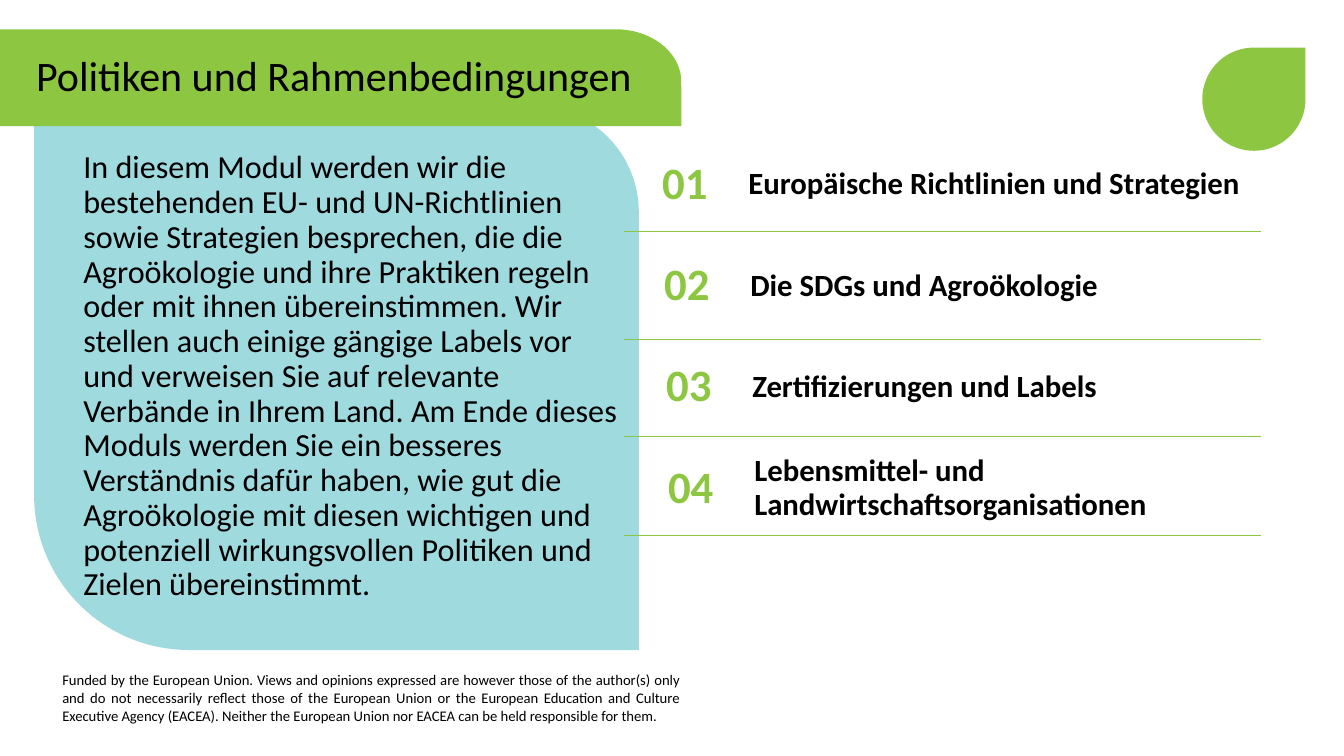
import math

import pptx
import pptx.dml.color
import pptx.enum.shapes
import pptx.enum.text
import pptx.util
from lxml import etree

Cm = pptx.util.Cm
Pt = pptx.util.Pt
RGB = pptx.dml.color.RGBColor.from_string
SHAPE = pptx.enum.shapes.MSO_SHAPE
ALIGN = pptx.enum.text.PP_ALIGN
ANCHOR = pptx.enum.text.MSO_ANCHOR

COLORS = {"green": "8DC641", "aqua": "9FDADF", "black": "000000"}
A = "http://schemas.openxmlformats.org/drawingml/2006/main"

prs = pptx.Presentation()
prs.slide_width = Cm(33.87)
prs.slide_height = Cm(19.05)
s = prs.slides.add_slide(prs.slide_layouts[6])


def add_text(text, left, top, width, height, size, color="black", bold=False,
             align=ALIGN.LEFT, anchor=ANCHOR.MIDDLE, spacing=0.9):
    tf = s.shapes.add_textbox(Cm(left), Cm(top), Cm(width), Cm(height)).text_frame
    tf.word_wrap = True
    tf.vertical_anchor = anchor
    p = tf.paragraphs[0]
    p.text = text
    p.alignment = align
    p.line_spacing = spacing
    r = p.runs[0]
    r.font.name = "Calibri"
    r.font.size = Pt(size)
    r.font.bold = bold
    r.font.color.rgb = RGB(COLORS[color])


def arc(cx, cy, rx, ry, start):
    """Points of a clockwise quarter ellipse from the start angle in degrees."""
    angles = [math.radians(start + 3 * i) for i in range(31)]
    return [(cx + rx * math.cos(a), cy + ry * math.sin(a)) for a in angles]


# Intro panel and title bar
panel = ([(16.1, 16.38)] + arc(4.76, 12.48, 3.9, 3.9, 90)
         + [(0.86, 2.67)] + arc(13.43, 5.34, 2.67, 2.67, 270))
title_bar = [(0, 3.18), (0, 0.74)] + arc(15.52, 2.06, 1.65, 1.32, 270) + [(17.17, 3.18)]
for outline, color in ((panel, "aqua"), (title_bar, "green")):
    points = [(Cm(x), Cm(y)) for x, y in outline]
    fb = s.shapes.build_freeform(*points[0])
    fb.add_line_segments(points[1:], close=True)
    sp = fb.convert_to_shape()
    sp.shadow.inherit = False
    sp.fill.solid()
    sp.fill.fore_color.rgb = RGB(COLORS[color])
    sp.line.fill.background()

# Rules below the agenda items
for y in (5.84, 8.56, 11, 13.49):
    rule = s.shapes.add_connector(pptx.enum.shapes.MSO_CONNECTOR.STRAIGHT,
                                  Cm(15.72), Cm(y), Cm(31.78), Cm(y))
    rule.line.color.rgb = RGB(COLORS["green"])
    rule.line.width = Pt(1)
    etree.SubElement(rule._element.spPr, f"{{{A}}}effectLst")

# Agenda
agenda = ["Europäische Richtlinien und Strategien",
          "Die SDGs und Agroökologie",
          "Zertifizierungen und Labels",
          "Lebensmittel- und Landwirtschaftsorganisationen"]
for i, topic in enumerate(agenda):
    left = 16.28 + 0.05 * i
    top = 3.71 + 2.55 * i
    add_text(f"{i + 1:02}", left, top, 1.96, 1.9, 32, "green", True, ALIGN.CENTER)
    add_text(topic, left + 2.33, top, 14, 1.9, 22, bold=True)

# Title, introduction and funding note
add_text("Politiken und Rahmenbedingungen", 0.66, 1.07, 16.05, 1.78, 30)
add_text("In diesem Modul werden wir die bestehenden EU- und UN-Richtlinien sowie "
         "Strategien besprechen, die die Agroökologie und ihre Praktiken regeln oder "
         "mit ihnen übereinstimmen. Wir stellen auch einige gängige Labels vor und "
         "verweisen Sie auf relevante Verbände in Ihrem Land. Am Ende dieses Moduls "
         "werden Sie ein besseres Verständnis dafür haben, wie gut die Agroökologie "
         "mit diesen wichtigen und potenziell wirkungsvollen Politiken und Zielen "
         "übereinstimmt.",
         1.85, 3.68, 14.1, 11.07, 23, anchor=ANCHOR.TOP)
add_text("Funded by the European Union. Views and opinions expressed are however those "
         "of the author(s) only and do not necessarily reflect those of the European "
         "Union or the European Education and Culture Executive Agency (EACEA). Neither "
         "the European Union nor EACEA can be held responsible for them.",
         1.32, 16.79, 16.08, 1.68, 10.5, align=ALIGN.JUSTIFY, anchor=ANCHOR.TOP, spacing=1)

# Leaf emblem
leaf = s.shapes.add_shape(SHAPE.TEAR, Cm(30.3), Cm(1.2), Cm(2.6), Cm(2.6))
leaf.shadow.inherit = False
leaf.fill.solid()
leaf.fill.fore_color.rgb = RGB(COLORS["green"])
leaf.line.fill.background()

prs.save("out.pptx")
